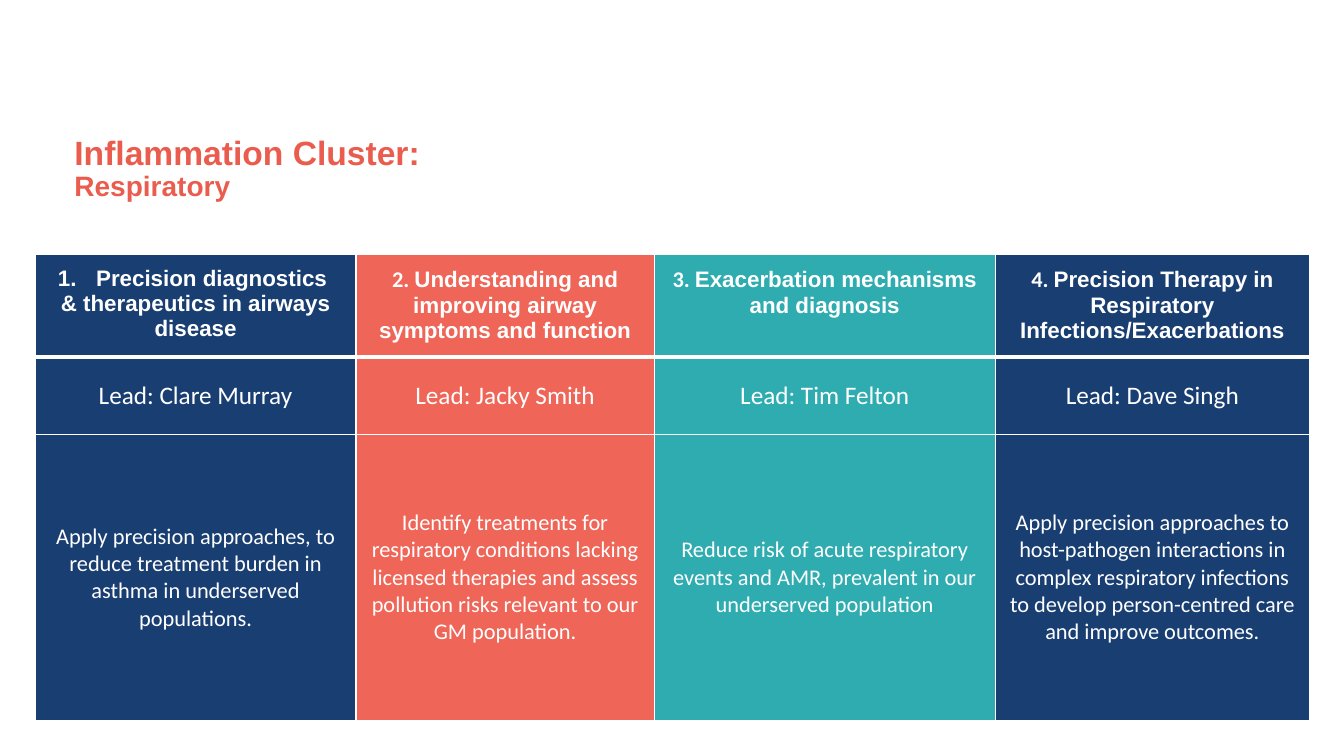
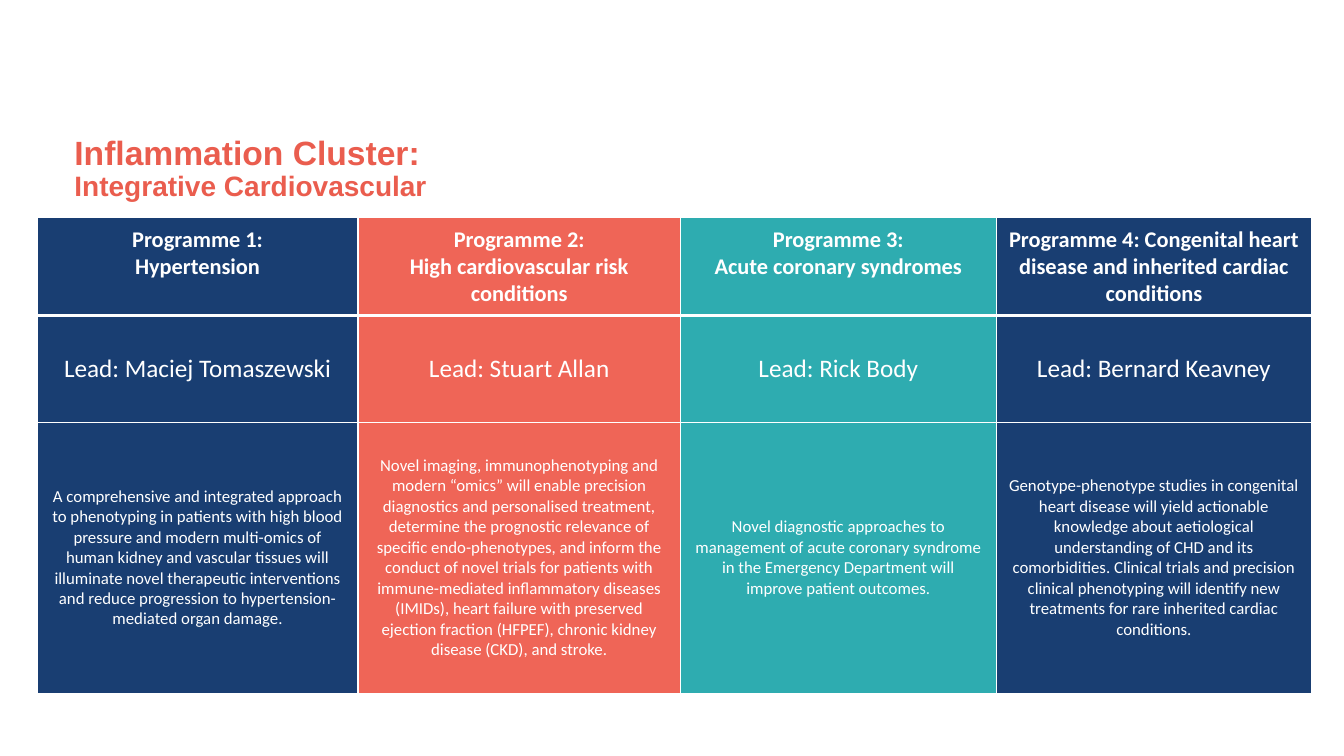
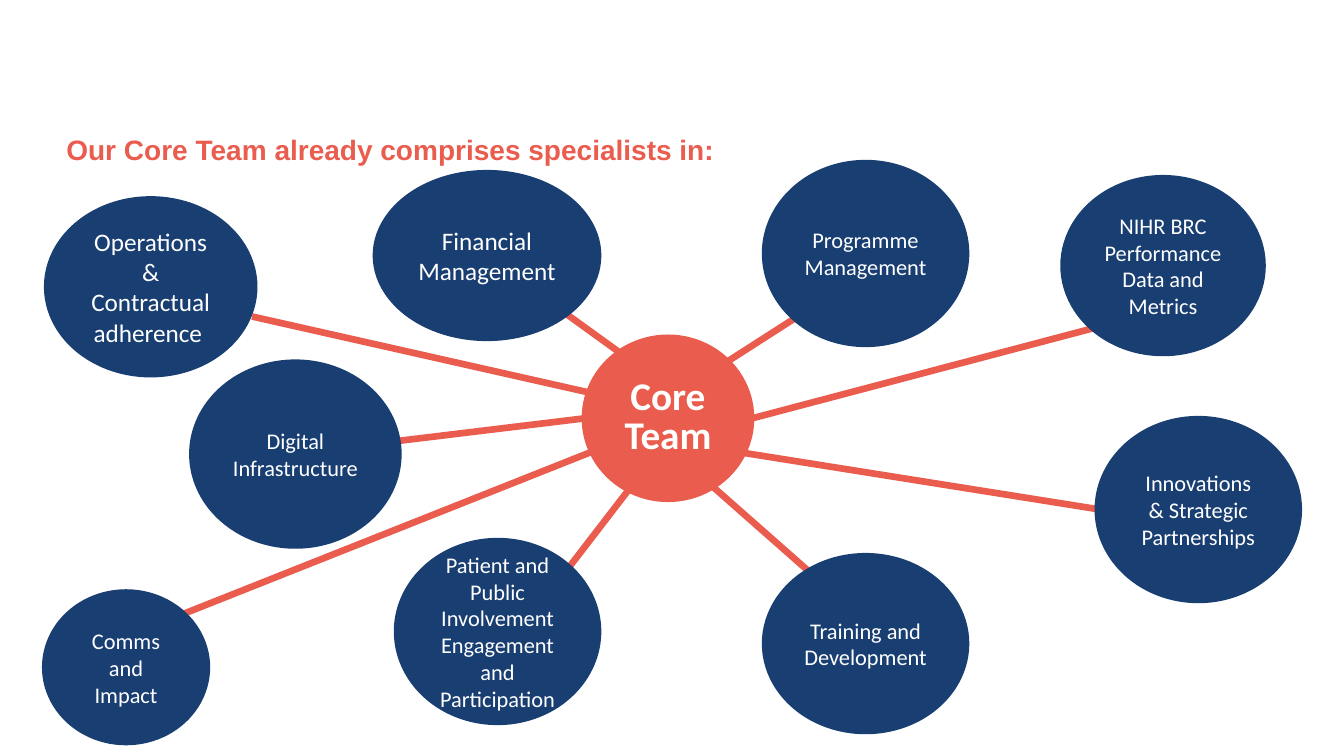
"""Build three slides: two programme tables and a map of the core team."""
import pptx
import pptx.dml.color
import pptx.enum.shapes
import pptx.enum.text
import pptx.oxml.ns
import pptx.util
from lxml import etree

EMU_PER_PX = 9144
NAVY, SALMON, TEAL, CORAL, WHITE = "193E72", "EF6557", "2EACB0", "EA5D4E", "FFFFFF"
COLUMN_FILLS = (NAVY, SALMON, TEAL, NAVY)
BODY, DISPLAY = "Calibri", "Arial"
CENTER = pptx.enum.text.PP_ALIGN.CENTER
MIDDLE = pptx.enum.text.MSO_ANCHOR.MIDDLE
TOP = pptx.enum.text.MSO_ANCHOR.TOP

RESPIRATORY = {
    "title": ("Inflammation Cluster:", "Respiratory"),
    "title_at": (64, 118, 1156, 100),
    "table_at": (35, 252),
    "widths": (318, 296, 338, 312),
    "heights": (102, 77, 284),
    "insets": (12, 12),
    "aim_size": 16,
    "numbered": True,
    "programmes": [
        ([[("Precision diagnostics ", DISPLAY)],
          [("& therapeutics in airways disease", DISPLAY)]],
         "Lead: Clare Murray",
         "Apply precision approaches, to reduce treatment burden in asthma in "
         "underserved populations."),
        ([[("2. ", BODY),
           ("Understanding and improving airway symptoms and function", DISPLAY)]],
         "Lead: Jacky Smith",
         "Identify treatments for respiratory conditions lacking licensed therapies "
         "and assess pollution risks relevant to our GM population."),
        ([[("3. ", BODY), ("Exacerbation mechanisms and diagnosis", DISPLAY)]],
         "Lead: Tim Felton",
         "Reduce risk of acute respiratory events and AMR, prevalent in our "
         "underserved population"),
        ([[("4. ", BODY),
           ("Precision Therapy in Respiratory Infections/Exacerbations", DISPLAY)]],
         "Lead: Dave Singh",
         "Apply precision approaches to host-pathogen interactions in complex "
         "respiratory infections to develop person-centred care and improve outcomes."),
    ],
}

CARDIOVASCULAR = {
    "title": ("Inflammation Cluster:", "Integrative Cardiovascular"),
    "title_at": (64, 120, 973, 96),
    "table_at": (37, 216),
    "widths": (318, 320, 313, 313),
    "heights": (97, 106, 269),
    "insets": (12, 8),
    "aim_size": 12,
    "numbered": False,
    "programmes": [
        ([[("Programme 1:", BODY)], [("Hypertension", BODY)]],
         "Lead: Maciej Tomaszewski",
         "A comprehensive and integrated approach to phenotyping in patients with "
         "high blood pressure and modern multi-omics of human kidney and vascular "
         "tissues will illuminate novel therapeutic interventions and reduce "
         "progression to hypertension-mediated organ damage."),
        ([[("Programme 2:", BODY)], [("High cardiovascular risk conditions", BODY)]],
         "Lead: Stuart Allan",
         "Novel imaging, immunophenotyping and modern “omics” will enable precision "
         "diagnostics and personalised treatment, determine the prognostic relevance "
         "of specific endo-phenotypes, and inform the conduct of novel trials for "
         "patients with immune-mediated inflammatory diseases (IMIDs), heart failure "
         "with preserved ejection fraction (HFPEF), chronic kidney disease (CKD), "
         "and stroke."),
        ([[("Programme 3:", BODY)], [("Acute coronary syndromes", BODY)]],
         "Lead: Rick Body",
         "Novel diagnostic approaches to management of acute coronary syndrome in "
         "the Emergency Department will improve patient outcomes."),
        ([[("Programme 4: Congenital heart disease and inherited cardiac conditions",
            BODY)]],
         "Lead: Bernard Keavney",
         "Genotype-phenotype studies in congenital heart disease will yield "
         "actionable knowledge about aetiological understanding of CHD and its "
         "comorbidities. Clinical trials and precision clinical phenotyping will "
         "identify new treatments for rare inherited cardiac conditions."),
    ],
}

TEAM_TITLE = "Our Core Team already comprises specialists in:"
TEAM_TITLE_AT = (56, 127, 806, 44)
CORE = ("Core Team", (580, 335, 165, 160))
SPECIALISTS = [
    ("Operations & Contractual adherence ", 18, (46, 197, 207, 175), (587, 390, 250, 314)),
    ("Financial Management ", 18, (372, 171, 222, 165), (615, 350, 561, 311)),
    ("Programme Management", 16, (758, 161, 201, 181), (721, 359, 788, 316)),
    ("NIHR BRC Performance Data and Metrics", 16, (1054, 176, 199, 175),
     (746, 415, 1083, 326)),
    ("Patient and Public Involvement Engagement and Participation", 16,
     (393, 536, 201, 181), (625, 484, 565, 562)),
    ("Comms and Impact", 16, (44, 587, 162, 150), (590, 447, 182, 609)),
    ("Digital Infrastructure ", 16, (190, 359, 206, 183), (580, 415, 349, 443)),
    ("Innovations & Strategic Partnerships", 16, (1088, 415, 201, 181),
     (723, 447, 1088, 505)),
    ("Training and Development", 16, (758, 551, 201, 175), (706, 482, 807, 571)),
]


def px(*lengths):
    return [pptx.util.Emu(length * EMU_PER_PX) for length in lengths]


def rgb(value):
    return pptx.dml.color.RGBColor.from_string(value)


def add_run(paragraph, text, size, color=WHITE, font=BODY, bold=False):
    run = paragraph.add_run()
    run.text = text
    run.font.size = pptx.util.Pt(size)
    run.font.name = font
    run.font.bold = bold
    run.font.color.rgb = rgb(color)


def add_title(slide, lines, sizes, at, anchor):
    frame = slide.shapes.add_textbox(*px(*at)).text_frame
    frame.word_wrap = True
    frame.vertical_anchor = anchor
    title = frame.paragraphs[0]
    if len(lines) > 1:
        title.line_spacing = 0.9
    for index, (line, size) in enumerate(zip(lines, sizes)):
        if index:
            title.add_line_break()
        add_run(title, line, size, CORAL, DISPLAY, True)


def add_borders(cell, row):
    widths = {"lnL": 1, "lnR": 1, "lnT": 3 if row == 1 else 1, "lnB": 3 if row == 0 else 1}
    properties = cell._tc.get_or_add_tcPr()
    for side, width in widths.items():
        line = etree.SubElement(properties, pptx.oxml.ns.qn("a:" + side),
                                w=str(pptx.util.Pt(width)))
        fill = etree.SubElement(line, pptx.oxml.ns.qn("a:solidFill"))
        etree.SubElement(fill, pptx.oxml.ns.qn("a:srgbClr"), val=WHITE)


def number_paragraph(paragraph):
    properties = paragraph._p.get_or_add_pPr()
    indent = px(38)[0]
    properties.set("marL", str(indent))
    properties.set("indent", str(-indent))
    etree.SubElement(properties, pptx.oxml.ns.qn("a:buAutoNum"), type="arabicPeriod")


def fill_cell(cell, row, paragraphs, size, color, insets):
    cell.margin_left = cell.margin_right = px(insets[0])[0]
    cell.margin_top = cell.margin_bottom = px(insets[1])[0]
    cell.vertical_anchor = MIDDLE if row else TOP
    add_borders(cell, row)
    cell.fill.solid()
    cell.fill.fore_color.rgb = rgb(color)
    for index, runs in enumerate(paragraphs):
        frame = cell.text_frame
        paragraph = frame.add_paragraph() if index else frame.paragraphs[0]
        paragraph.alignment = CENTER
        for text, font in runs:
            add_run(paragraph, text, size, font=font, bold=row == 0)


def add_cluster(slide, cluster):
    widths, heights = cluster["widths"], cluster["heights"]
    table = slide.shapes.add_table(
        len(heights), len(widths),
        *px(*cluster["table_at"], sum(widths), sum(heights))).table
    table.first_row = table.horz_banding = False
    for column, width in zip(table.columns, px(*widths)):
        column.width = width
    for row, height in zip(table.rows, px(*heights)):
        row.height = height
    sizes = (16, 18, cluster["aim_size"])
    for col, (heading, lead, aim) in enumerate(cluster["programmes"]):
        contents = (heading, [[(lead, BODY)]], [[(aim, BODY)]])
        for row, (paragraphs, size) in enumerate(zip(contents, sizes)):
            fill_cell(table.cell(row, col), row, paragraphs, size,
                      COLUMN_FILLS[col], cluster["insets"])
    if cluster["numbered"]:
        number_paragraph(table.cell(0, 0).text_frame.paragraphs[0])
    add_title(slide, cluster["title"], (24, 20), cluster["title_at"], MIDDLE)


def add_spoke(slide, ends):
    spoke = slide.shapes.add_connector(
        pptx.enum.shapes.MSO_CONNECTOR.STRAIGHT, *px(*ends))
    spoke.line.color.rgb = rgb(CORAL)
    spoke.line.width = pptx.util.Pt(4.75)
    etree.SubElement(spoke._element.spPr, pptx.oxml.ns.qn("a:effectLst"))


def add_circle(slide, text, size, at, color, outline, bold=False):
    circle = slide.shapes.add_shape(
        pptx.enum.shapes.MSO_SHAPE.FLOWCHART_CONNECTOR, *px(*at))
    circle.shadow.inherit = False
    circle.fill.solid()
    circle.fill.fore_color.rgb = rgb(color)
    circle.line.color.rgb = rgb(color)
    circle.line.width = pptx.util.Pt(outline)
    frame = circle.text_frame
    frame.word_wrap = True
    frame.vertical_anchor = MIDDLE
    frame.paragraphs[0].alignment = CENTER
    add_run(frame.paragraphs[0], text, size, bold=bold)
    return frame.paragraphs[0]


def add_team(slide):
    for *_, ends in SPECIALISTS:
        add_spoke(slide, ends)
    add_title(slide, (TEAM_TITLE,), (20,), TEAM_TITLE_AT, TOP)
    core_text, core_at = CORE
    core_label = add_circle(slide, core_text, 28, core_at, CORAL, 4.5, True)
    core_label.line_spacing = pptx.util.Pt(28)
    for role, size, at, _ in SPECIALISTS:
        add_circle(slide, role, size, at, NAVY, 3.5)


def main():
    deck = pptx.Presentation()
    deck.slide_width, deck.slide_height = px(1333, 750)
    blank = deck.slide_layouts[6]
    for cluster in (RESPIRATORY, CARDIOVASCULAR):
        add_cluster(deck.slides.add_slide(blank), cluster)
    add_team(deck.slides.add_slide(blank))
    deck.save("out.pptx")


if __name__ == "__main__":
    main()
